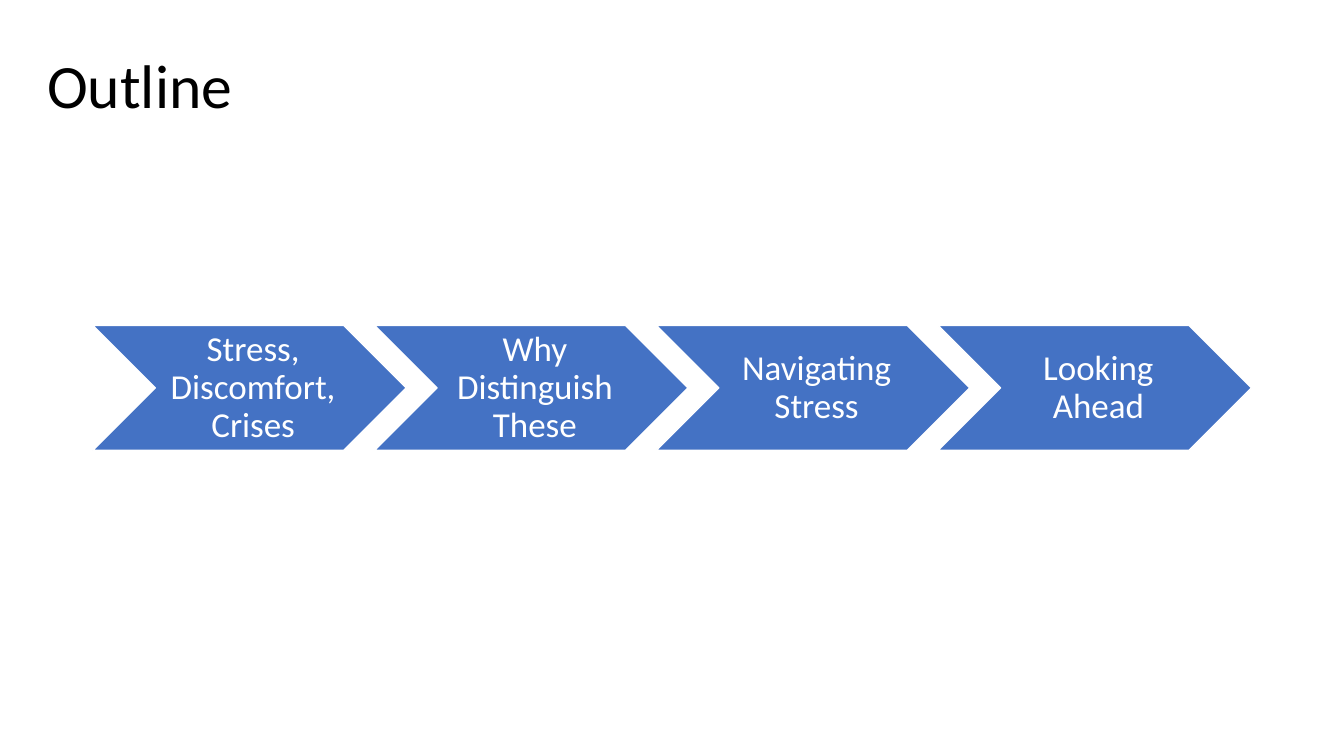
from pptx import Presentation
from pptx.dml.color import RGBColor
from pptx.enum.shapes import MSO_SHAPE as Preset
from pptx.enum.text import MSO_ANCHOR as Anchor, PP_ALIGN as Align
from pptx.util import Cm, Pt

BLACK = RGBColor(0x00, 0x00, 0x00)
WHITE = RGBColor(0xFF, 0xFF, 0xFF)
BLUE = RGBColor(0x44, 0x72, 0xC4)

TOPICS = [
    "Stress, Discomfort, Crises",
    "Why Distinguish These",
    "Navigating Stress",
    "Looking Ahead",
]
FIRST_LEFT, STEP_TOP = 2.34, 8.2
STEP_WIDTH, STEP_HEIGHT = 7.9, 3.15
STEP_PITCH = 7.1


class OutlineSlide:
    font = "Calibri"
    line_spacing = 0.9

    def __init__(self, deck):
        self.slide = deck.slides.add_slide(deck.slide_layouts[6])

    def set_text(self, frame, words, size, color, align):
        frame.word_wrap = True
        frame.vertical_anchor = Anchor.MIDDLE
        paragraph = frame.paragraphs[0]
        paragraph.alignment = align
        paragraph.line_spacing = self.line_spacing
        run = paragraph.add_run()
        run.text = words
        run.font.name = self.font
        run.font.size = Pt(size)
        run.font.color.rgb = color

    def title(self, words, left, top, width, height):
        heading = self.slide.shapes.add_textbox(
            Cm(left), Cm(top), Cm(width), Cm(height))
        self.set_text(heading.text_frame, words, 44, BLACK, Align.LEFT)

    def step(self, words, left, top, width, height):
        """Draw one chevron of the process with its topic inside."""
        chevron = self.slide.shapes.add_shape(
            Preset.CHEVRON, Cm(left), Cm(top), Cm(width), Cm(height))
        chevron.shadow.inherit = False
        chevron.fill.solid()
        chevron.fill.fore_color.rgb = BLUE
        chevron.line.color.rgb = WHITE
        chevron.line.width = Pt(1)
        frame = chevron.text_frame
        frame.margin_left = Cm(0.27)
        frame.margin_top = frame.margin_right = frame.margin_bottom = Cm(0.09)
        self.set_text(frame, words, 25, WHITE, Align.CENTER)


def main():
    deck = Presentation()
    deck.slide_width, deck.slide_height = Cm(33.87), Cm(19.05)
    outline = OutlineSlide(deck)
    outline.title("Outline", 0.94, 0.38, 29.21, 3.68)
    for index, topic in enumerate(TOPICS):
        outline.step(topic, FIRST_LEFT + index * STEP_PITCH, STEP_TOP,
                     STEP_WIDTH, STEP_HEIGHT)
    deck.save("out.pptx")


if __name__ == "__main__":
    main()
